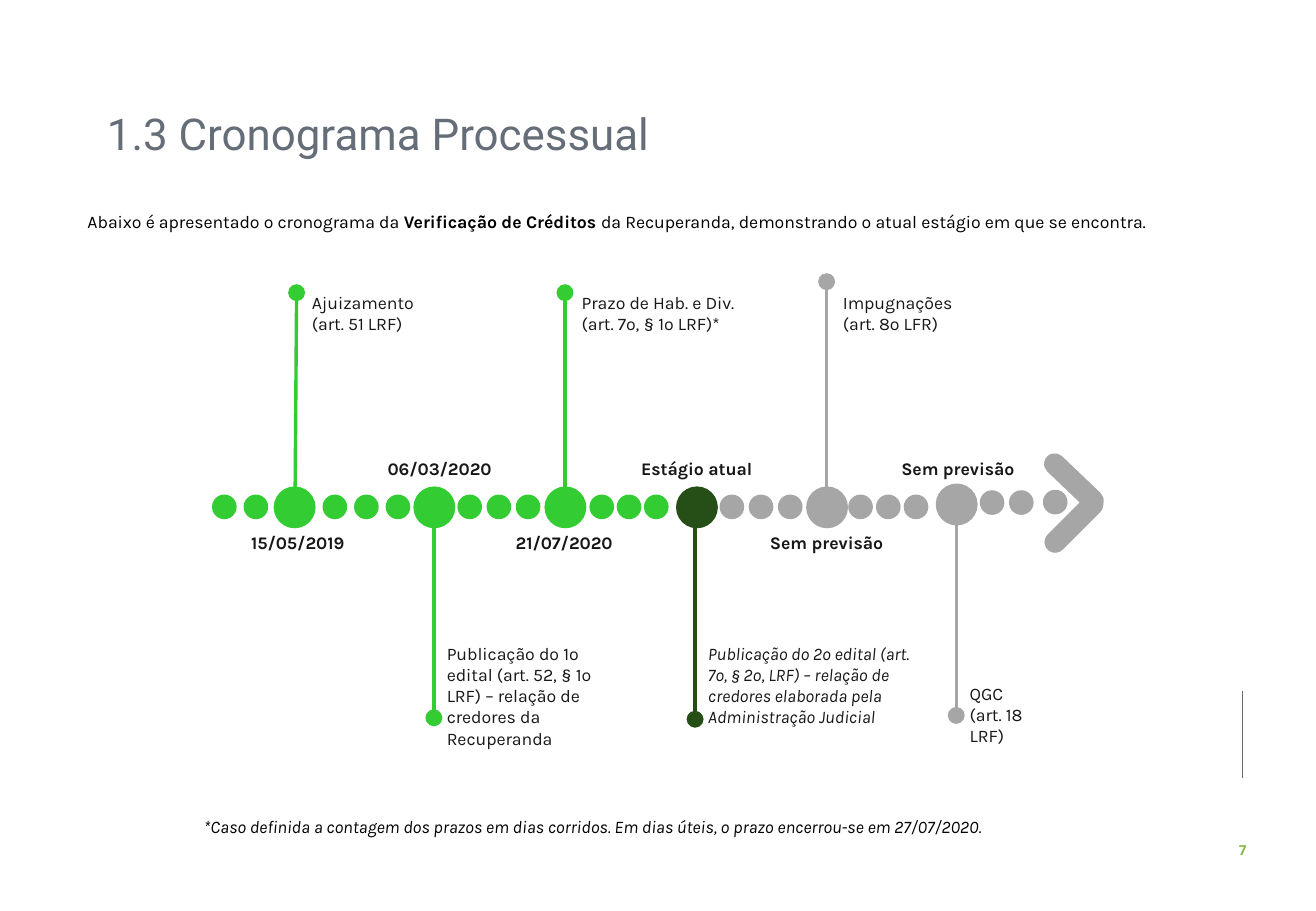
from dataclasses import dataclass
from typing import Optional

from lxml.etree import SubElement
from pptx import Presentation
from pptx.dml.color import RGBColor
from pptx.enum.shapes import MSO_CONNECTOR as Connector, MSO_SHAPE as Shape
from pptx.enum.text import MSO_ANCHOR as Anchor, PP_ALIGN as Align
from pptx.oxml.ns import qn
from pptx.util import Cm, Pt

COLOURS = {
    "done": "33CC33",
    "current": "264F17",
    "pending": "A6A6A6",
    "title": "656D78",
    "ink": "181717",
    "black": "000000",
    "number": "7CB342",
}
DOT = 0.48
CIRCLE = 0.84
DATE_ABOVE, DATE_BELOW = 9.45, 11.0


@dataclass
class Span:
    text: str
    colour: str = "ink"
    bold: bool = False
    italic: bool = False
    size: float = 10.5
    font: str = "Karla"


@dataclass
class Box:
    left: float
    top: float
    width: float
    height: float


@dataclass
class DotRun:
    left: float
    pitch: float
    count: int
    colour: str
    top: float = 10.36


@dataclass
class Milestone:
    left: float
    top: float
    colour: str
    foot_x: float
    tip_x: float
    tip_y: float
    date: str
    date_box: Box
    label: str
    label_box: Box
    italic: bool = False


DOT_RUNS = [
    DotRun(4.45, 0.66, 2, "done"),
    DotRun(6.76, 0.66, 3, "done"),
    DotRun(9.58, 0.61, 3, "done"),
    DotRun(12.34, 0.57, 3, "done"),
    DotRun(15.06, 0.61, 3, "pending"),
    DotRun(17.75, 0.58, 3, "pending"),
    DotRun(20.5, 0.61, 2, "pending", 10.27),
    DotRun(21.82, 0, 1, "pending", 10.26),
]

MILESTONES = [
    Milestone(5.74, 10.19, "done", 6.17, 6.2, 6.12,
              "15/05/2019", Box(3.99, DATE_BELOW, 4.47, 0.71),
              "Ajuizamento (art. 51 LRF)", Box(6.27, 5.97, 2.84, 1.14)),
    Milestone(8.66, 10.19, "done", 9.07, 9.07, 15.01,
              "06/03/2020", Box(7.26, DATE_ABOVE, 3.86, 0.71),
              "Publicação do 1º edital (art. 52, § 1º LRF) – relação de credores da Recuperanda",
              Box(9.09, 13.31, 4.27, 2.06)),
    Milestone(11.4, 10.19, "done", 11.81, 11.81, 6.12,
              "21/07/2020", Box(10.4, DATE_BELOW, 2.79, 0.71),
              "Prazo de Hab. e Div. (art. 7º, § 1º LRF)*", Box(11.91, 5.97, 4.11, 1.14)),
    Milestone(14.15, 10.19, "current", 14.53, 14.53, 15.04,
              "Estágio atual", Box(13.08, DATE_ABOVE, 2.97, 0.71),
              "Publicação do 2º edital (art. 7º, § 2º, LRF) – relação de credores "
              "elaborada pela Administração Judicial",
              Box(14.55, 13.31, 5.05, 2.06), True),
    Milestone(16.87, 10.19, "pending", 17.28, 17.28, 5.89,
              "Sem previsão", Box(15.72, DATE_BELOW, 3.12, 0.71),
              "Impugnações (art. 8º LFR)", Box(17.37, 5.97, 3.2, 1.14)),
    Milestone(19.58, 10.13, "pending", 19.99, 19.99, 14.96,
              "Sem previsão", Box(18.54, DATE_ABOVE, 2.97, 0.71),
              "QGC\n(art. 18 LRF)", Box(20.02, 14.15, 2.29, 1.14)),
]


def rgb(name: str) -> RGBColor:
    return RGBColor.from_string(COLOURS[name])


def add_spans(para, spans: list[Span]) -> None:
    for item in spans:
        span = para.add_run()
        span.text = item.text
        font = span.font
        font.name, font.size = item.font, Pt(item.size)
        font.bold, font.italic = item.bold, item.italic
        font.color.rgb = rgb(item.colour)


def add_text(page, box: Box, lines: list[list[Span]], align=Align.LEFT):
    frame = page.shapes.add_textbox(
        Cm(box.left), Cm(box.top), Cm(box.width), Cm(box.height)).text_frame
    frame.word_wrap = True
    for index, spans in enumerate(lines):
        para = frame.add_paragraph() if index else frame.paragraphs[0]
        para.alignment = align
        add_spans(para, spans)
    return frame


def add_filled(page, kind: Shape, box: Box, colour: str, rotation: float = 0):
    shape = page.shapes.add_shape(
        kind, Cm(box.left), Cm(box.top), Cm(box.width), Cm(box.height))
    shape.shadow.inherit = False
    shape.fill.solid()
    shape.fill.fore_color.rgb = rgb(colour)
    shape.line.color.rgb = rgb(colour)
    shape.line.width = Pt(1)
    shape.rotation = rotation
    return shape


def add_line(page, x1: float, y1: float, x2: float, y2: float,
             colour: str, width: float, tail: Optional[str] = None) -> None:
    line = page.shapes.add_connector(Connector.STRAIGHT, Cm(x1), Cm(y1), Cm(x2), Cm(y2))
    line.line.color.rgb = rgb(colour)
    line.line.width = Pt(width)
    properties = line._element.spPr
    if tail:
        SubElement(properties.find(qn("a:ln")), qn("a:tailEnd"), type=tail, w="lg", len="lg")
    SubElement(properties, qn("a:effectLst"))


def add_milestone(page, stage: Milestone) -> None:
    foot_y = stage.top if stage.tip_y < stage.top else stage.top + CIRCLE
    add_line(page, stage.foot_x, foot_y, stage.tip_x, stage.tip_y, stage.colour, 2, "oval")
    add_filled(page, Shape.OVAL, Box(stage.left, stage.top, CIRCLE, CIRCLE), stage.colour)
    add_text(page, stage.date_box, [[Span(stage.date, bold=True)]], Align.CENTER)
    add_text(page, stage.label_box,
             [[Span(line, italic=stage.italic)] for line in stage.label.split("\n")])


def add_title(page) -> None:
    title = page.shapes.title
    title.left, title.top, title.width, title.height = Cm(1.98), Cm(2.18), Cm(20.78), Cm(1.35)
    title.text_frame.vertical_anchor = Anchor.MIDDLE
    para = title.text_frame.paragraphs[0]
    para.alignment = Align.LEFT
    para.line_spacing = 0.9
    add_spans(para, [Span("1.3 Cronograma Processual", "title", size=26, font="Roboto")])


def add_intro(page) -> None:
    frame = add_text(page, Box(0.79, 4.22, 25.83, 0.76), [[
        Span("Abaixo é apresentado o cronograma da ", "black"),
        Span("Verificação de Créditos ", "black", bold=True),
        Span("da Recuperanda, demonstrando o atual estágio em que se encontra.", "black"),
    ]], Align.JUSTIFY)
    para = frame.paragraphs[0]
    para.line_spacing = 1.14
    para._p.get_or_add_pPr().set("indent", str(Cm(0.79)))


def add_footnote(page) -> None:
    table = page.shapes.add_table(1, 1, Cm(4.01), Cm(16.97), Cm(20.37), Cm(1.04)).table
    table.first_row = table.horz_banding = False
    cell = table.cell(0, 0)
    cell.fill.background()
    add_spans(cell.text_frame.paragraphs[0], [Span(
        "*Caso definida a contagem dos prazos em dias corridos. "
        "Em dias úteis, o prazo encerrou-se em 27/07/2020.", "black", italic=True)])


def main() -> None:
    deck = Presentation()
    deck.slide_width, deck.slide_height = Cm(27.51), Cm(19.05)
    page = deck.slides.add_slide(deck.slide_layouts[5])
    add_title(page)
    add_intro(page)
    for run in DOT_RUNS:
        for index in range(run.count):
            box = Box(run.left + index * run.pitch, run.top, DOT, DOT)
            add_filled(page, Shape.OVAL, box, run.colour)
    for top, rotation in ((9.88, 43.7), (10.74, 315)):
        bar = add_filled(page, Shape.ROUNDED_RECTANGLE, Box(21.69, top, 1.52, 0.41),
                         "pending", rotation)
        bar.adjustments[0] = 0.5
    for stage in MILESTONES:
        add_milestone(page, stage)
    add_footnote(page)
    add_line(page, 25.98, 14.45, 25.98, 16.26, "title", 0.5)
    add_text(page, Box(25.55, 17.48, 0.86, 0.61),
             [[Span("7", "number", bold=True, size=8.1, font="Roboto")]], Align.CENTER)
    deck.save("out.pptx")


if __name__ == "__main__":
    main()
